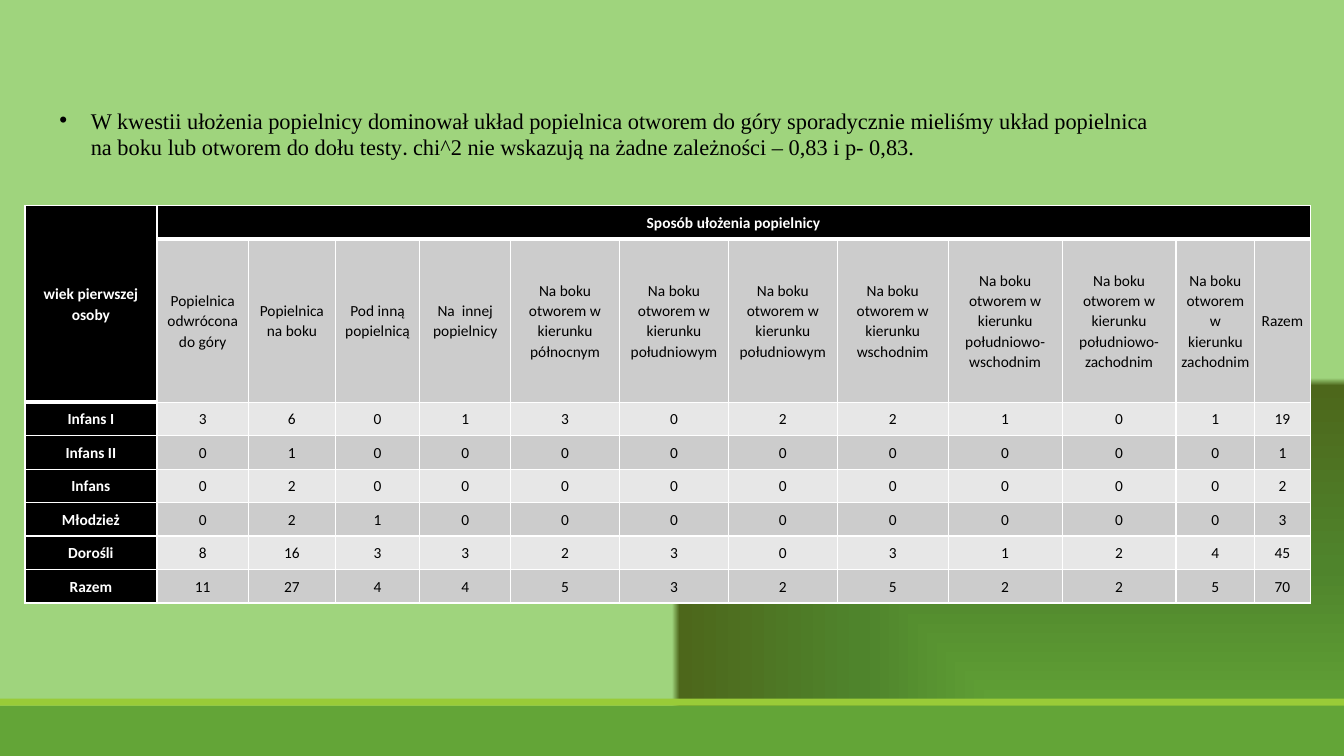
import pptx
import pptx.dml.color
import pptx.enum.shapes
import pptx.enum.text
import pptx.oxml
import pptx.oxml.ns
import pptx.util
from pptx.dml.color import RGBColor
from pptx.util import Pt

BLACK = RGBColor(0x00, 0x00, 0x00)
WHITE = RGBColor(0xFF, 0xFF, 0xFF)
DARK_BAND = RGBColor(0xCC, 0xCC, 0xCC)
LIGHT_BAND = RGBColor(0xE7, 0xE7, 0xE7)
FOOTER_GREEN = RGBColor(0x63, 0xA5, 0x37)
STRIPE_GREEN = RGBColor(0x99, 0xCB, 0x38)
BACKDROP_STOPS = [
    (0, RGBColor(0x67, 0xAC, 0x39)),
    (50, RGBColor(0x4F, 0x84, 0x2C)),
    (98, RGBColor(0x4D, 0x67, 0x1B)),
    (100, RGBColor(0x9F, 0xD4, 0x7D)),
]

SERIF = "Times New Roman"
SANS = "Calibri"
COMMENT = [
    ("W kwestii ułożenia popielnicy dominował układ popielnica otworem do góry "
     "sporadycznie mieliśmy układ popielnica na boku lub otworem do dołu testy", SERIF),
    (". ", SANS),
    ("chi^2 nie wskazują na żadne zależności – 0,83 i p- 0,83.", SERIF),
]

SIDE = "Na boku otworem w kierunku "
POSITIONS = ["Popielnica odwrócona do góry", "Popielnica na boku",
             "Pod inną popielnicą", "Na  innej popielnicy"]
POSITIONS += [SIDE + direction for direction in (
    "północnym", "południowym", "południowym", "wschodnim",
    "południowo-wschodnim", "południowo-zachodnim", "zachodnim")]
ROWS = [
    ["wiek pierwszej osoby", "Sposób ułożenia popielnicy"] + [""] * 11,
    [""] + POSITIONS + ["Razem"],
    ["Infans I", 3, 6, 0, 1, 3, 0, 2, 2, 1, 0, 1, 19],
    ["Infans II", 0, 1, 0, 0, 0, 0, 0, 0, 0, 0, 0, 1],
    ["Infans", 0, 2, 0, 0, 0, 0, 0, 0, 0, 0, 0, 2],
    ["Młodzież", 0, 2, 1, 0, 0, 0, 0, 0, 0, 0, 0, 3],
    ["Dorośli", 8, 16, 3, 3, 2, 3, 0, 3, 1, 2, 4, 45],
    ["Razem", 11, 27, 4, 4, 5, 3, 2, 5, 2, 2, 5, 70],
]
COLUMN_WIDTHS = [94.3, 65.5, 61.9, 60.5, 64.8, 77.8, 77.8, 77.8, 79.2, 81.4, 81.4, 56.2, 39.6]
ROW_HEIGHTS = [23.9, 116.4] + [23.9] * 6


def set_backdrop(page):
    stops = "".join(
        f'<a:gs pos="{place * 1000}"><a:srgbClr val="{color}"/></a:gs>'
        for place, color in BACKDROP_STOPS)
    backdrop = pptx.oxml.parse_xml(
        f'<p:bg {pptx.oxml.ns.nsdecls("p", "a")}><p:bgPr><a:gradFill rotWithShape="1">'
        f'<a:gsLst>{stops}</a:gsLst><a:path path="rect">'
        '<a:fillToRect l="100000" t="100000"/></a:path></a:gradFill>'
        '<a:effectLst/></p:bgPr></p:bg>')
    page.element.cSld.insert(0, backdrop)


def add_band(page, top, height, color):
    band = page.shapes.add_shape(
        pptx.enum.shapes.MSO_SHAPE.RECTANGLE, 0, Pt(top), Pt(960), Pt(height))
    band.shadow.inherit = False
    band.fill.solid()
    band.fill.fore_color.rgb = color
    band.line.fill.background()


def add_bullet_text(page, left, top, width, height, pieces):
    box = page.shapes.add_textbox(Pt(left), Pt(top), Pt(width), Pt(height))
    box.text_frame.word_wrap = True
    para = box.text_frame.paragraphs[0]
    para.font.size = Pt(16)
    para.font.color.rgb = BLACK
    for text, typeface in pieces:
        span = para.add_run()
        span.text = text
        span.font.name = typeface
    settings = para._p.get_or_add_pPr()
    settings.set("marL", str(Pt(22.5)))
    settings.set("indent", str(Pt(-22.5)))
    namespace = pptx.oxml.ns.nsdecls("a")
    settings.insert(0, pptx.oxml.parse_xml(f'<a:buFont {namespace} typeface="Arial"/>'))
    settings.insert(1, pptx.oxml.parse_xml(f'<a:buChar {namespace} char="•"/>'))


def set_borders(cell, top, bottom):
    settings = cell._tc.get_or_add_tcPr()
    for side, weight in (("L", 1), ("R", 1), ("T", top), ("B", bottom)):
        settings.append(pptx.oxml.parse_xml(
            f'<a:ln{side} {pptx.oxml.ns.nsdecls("a")} w="{Pt(weight)}">'
            f'<a:solidFill><a:srgbClr val="{WHITE}"/></a:solidFill></a:ln{side}>'))


def fill_cell(cell, text, fill, color, bold):
    cell.fill.solid()
    cell.fill.fore_color.rgb = fill
    cell.vertical_anchor = pptx.enum.text.MSO_ANCHOR.MIDDLE
    cell.margin_left = cell.margin_right = Pt(3.6)
    cell.margin_top = cell.margin_bottom = 0
    para = cell.text_frame.paragraphs[0]
    para.text = text
    para.alignment = pptx.enum.text.PP_ALIGN.CENTER
    para.line_spacing = 1.07
    para.font.name = SANS
    para.font.size = Pt(11)
    para.font.bold = bold
    para.font.color.rgb = color


def add_count_table(page, left, top):
    frame = page.shapes.add_table(
        len(ROWS), len(COLUMN_WIDTHS), Pt(left), Pt(top),
        Pt(sum(COLUMN_WIDTHS)), Pt(sum(ROW_HEIGHTS)))
    table = frame.table
    table.first_row = False
    table.horz_banding = False
    for column, width in zip(table.columns, COLUMN_WIDTHS):
        column.width = Pt(width)
    for row, height in zip(table.rows, ROW_HEIGHTS):
        row.height = Pt(height)
    for row, values in enumerate(ROWS):
        for column, value in enumerate(values):
            cell = table.cell(row, column)
            heading = row == 0 or column == 0
            last_heading_row = 1 if column == 0 else 0
            set_borders(cell, 3 if row == last_heading_row + 1 else 1,
                        3 if row <= last_heading_row else 1)
            band = DARK_BAND if row % 2 else LIGHT_BAND
            fill_cell(cell, str(value), BLACK if heading else band,
                      WHITE if heading else BLACK, heading)
    table.cell(0, 0).merge(table.cell(1, 0))
    table.cell(0, 1).merge(table.cell(0, len(COLUMN_WIDTHS) - 1))


def main():
    deck = pptx.Presentation()
    deck.slide_width = Pt(960)
    deck.slide_height = Pt(540)
    page = deck.slides.add_slide(deck.slide_layouts[6])
    set_backdrop(page)
    add_band(page, 504, 36, FOOTER_GREEN)
    add_band(page, 499, 5, STRIPE_GREEN)
    add_bullet_text(page, 35.3, 72.7, 793.4, 46.1, COMMENT)
    add_count_table(page, 17.8, 147)
    deck.save("out.pptx")


if __name__ == "__main__":
    main()
